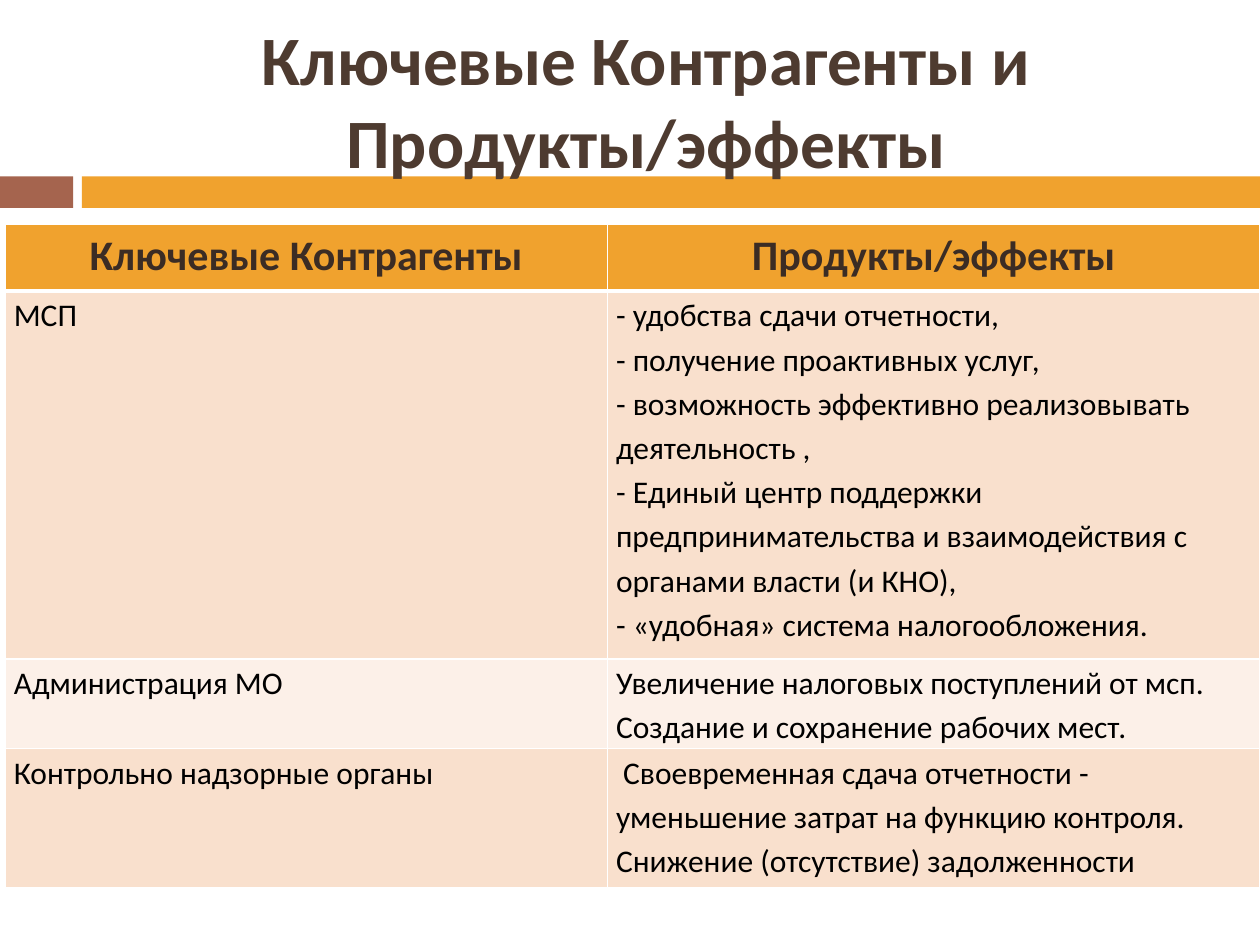
from dataclasses import dataclass

from lxml.etree import SubElement
from pptx import Presentation
from pptx.dml.color import RGBColor
from pptx.enum.shapes import MSO_SHAPE
from pptx.enum.text import MSO_ANCHOR, MSO_AUTO_SIZE, PP_ALIGN
from pptx.oxml.ns import qn
from pptx.util import Inches, Pt


@dataclass(frozen=True)
class Theme:
    font: str = "Calibri"
    title_size: float = 39.6
    header_size: int = 24
    body_size: int = 18
    title: str = "4E3B30"
    header: str = "3B2C24"
    body: str = "000000"
    brown: str = "A5644E"
    orange: str = "F0A22E"
    bands: tuple = ("F9E0CD", "FCF0E8")
    grid: str = "FFFFFF"


theme = Theme()


def style(para, size, color, bold=False):
    para.font.name = theme.font
    para.font.size = Pt(size)
    para.font.bold = bold
    para.font.color.rgb = RGBColor.from_string(color)


def add_borders(cell, widths):
    """Draw left, right, top and bottom borders with widths in points."""
    properties = cell._tc.get_or_add_tcPr()
    for side, width in zip("LRTB", widths):
        line = SubElement(properties, qn(f"a:ln{side}"), w=str(Pt(width)))
        fill = SubElement(line, qn("a:solidFill"))
        SubElement(fill, qn("a:srgbClr"), val=theme.grid)


deck = Presentation()
deck.slide_width, deck.slide_height = Inches(10), Inches(7.5)
page = deck.slides.add_slide(deck.slide_layouts[5])

# Divider: a short brown bar and a long orange one
for left, right, color in ((0, 0.58, theme.brown), (0.65, 10, theme.orange)):
    bar = page.shapes.add_shape(MSO_SHAPE.RECTANGLE, Inches(left), Inches(1.4),
                                Inches(right - left), Inches(0.25))
    bar.shadow.inherit = False
    bar.fill.solid()
    bar.fill.fore_color.rgb = RGBColor.from_string(color)
    bar.line.fill.background()

# Title, brought in front of the divider
title = page.shapes.title
title.element.getparent().append(title.element)
title.left, title.top = Inches(0.67), Inches(0.25)
title.width, title.height = Inches(8.92), Inches(1.08)
title.text = "Ключевые Контрагенты и Продукты/эффекты"
title.text_frame.auto_size = MSO_AUTO_SIZE.NONE
title.text_frame.vertical_anchor = MSO_ANCHOR.MIDDLE
title.text_frame.paragraphs[0].alignment = PP_ALIGN.CENTER
style(title.text_frame.paragraphs[0], theme.title_size, theme.title, bold=True)

# Table content: each cell is a list of paragraphs
rows = [
    (["Ключевые Контрагенты"], ["Продукты/эффекты"]),
    (["МСП"],
     ["- удобства сдачи отчетности,",
      "- получение проактивных услуг,",
      "- возможность эффективно реализовывать деятельность ,",
      "- Единый центр поддержки предпринимательства и взаимодействия с "
      "органами власти (и КНО),",
      "- «удобная» система налогообложения."]),
    (["Администрация МО"],
     ["Увеличение налоговых поступлений от мсп.",
      "Создание и сохранение рабочих мест."]),
    (["Контрольно надзорные органы"],
     [" Своевременная сдача отчетности - уменьшение затрат на функцию контроля.",
      "Снижение (отсутствие) задолженности"]),
]
column_widths = (4.78, 5.18)
row_heights = (0.53, 2.92, 0.71, 1.11)

# Table grid
table = page.shapes.add_table(
    len(rows), len(column_widths), Inches(0.04), Inches(1.78),
    Inches(sum(column_widths)), Inches(sum(row_heights))).table
for column, width in zip(table.columns, column_widths):
    column.width = Inches(width)
for row, height in zip(table.rows, row_heights):
    row.height = Inches(height)

# Table cells
for r, row in enumerate(rows):
    is_header = r == 0
    for c, lines in enumerate(row):
        cell = table.cell(r, c)
        add_borders(cell, (1, 1, 3 if r == 1 else 1, 3 if is_header else 1))
        cell.fill.solid()
        cell.fill.fore_color.rgb = RGBColor.from_string(
            theme.orange if is_header else theme.bands[(r - 1) % 2])
        cell.text = "\n".join(lines)
        if not is_header:
            cell.margin_left = cell.margin_right = Inches(0.07)
            cell.margin_top = cell.margin_bottom = 0
        for para in cell.text_frame.paragraphs:
            if is_header:
                para.alignment = PP_ALIGN.CENTER
                style(para, theme.header_size, theme.header, bold=True)
            else:
                para.line_spacing = 1.15
                style(para, theme.body_size, theme.body)

deck.save("out.pptx")
